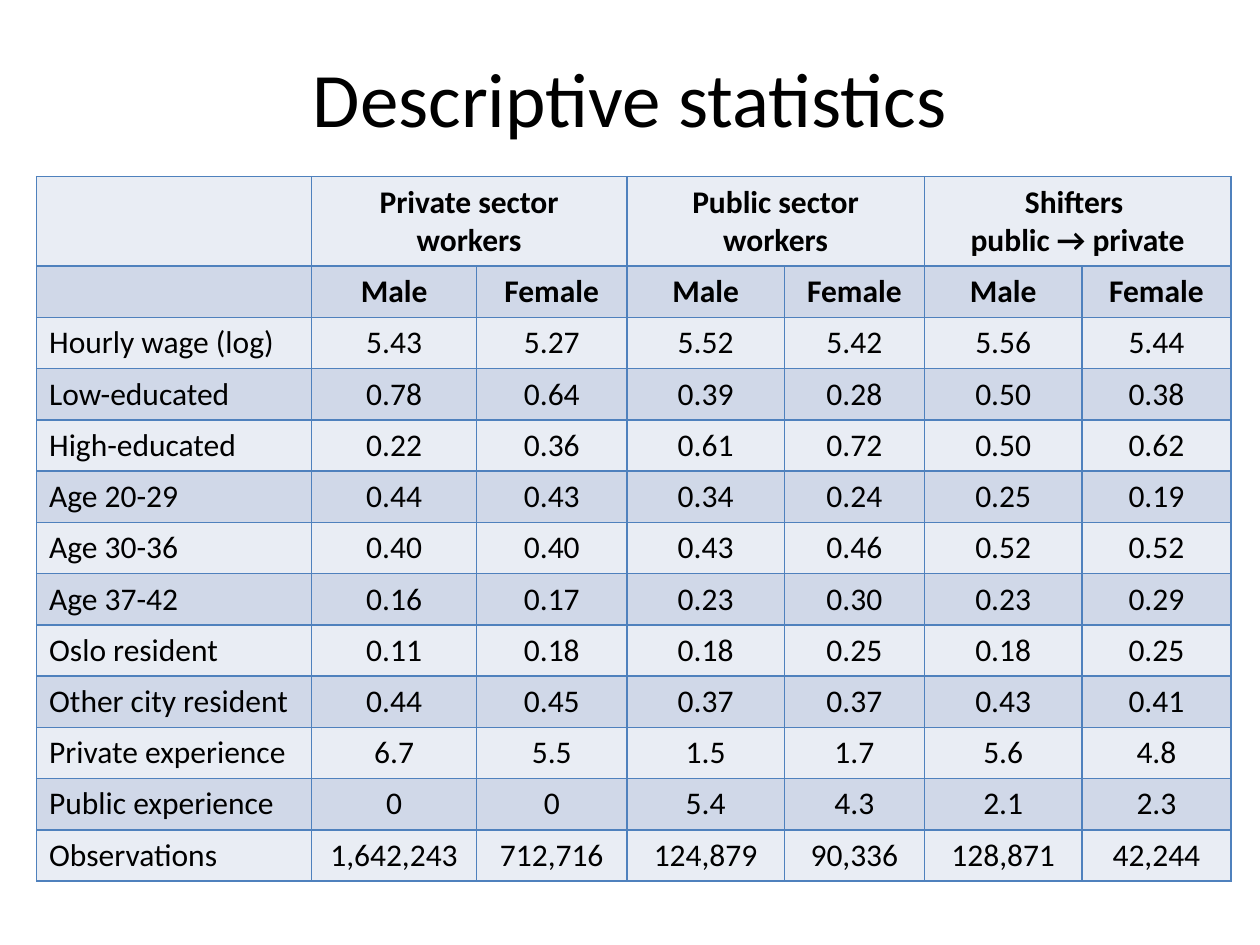
from lxml import etree
from pptx import Presentation
from pptx import util as u
from pptx.dml.color import RGBColor
from pptx.enum import text
from pptx.oxml import ns

WIDTH, HEIGHT = u.Inches(10), u.Inches(7.5)
INK, LINE = "000000", "4F81BD"
BANDS = ("E9EDF4", "D0D8E8")
COLUMN_WEIGHTS = (2.18, 1.31, 1.19, 1.25, 1.11, 1.25, 1.18)
HEADER_WEIGHT = 1.7
GROUPS = ("Private sector workers", "Public sector workers", "Shifters \npublic → private")
STATISTICS = (
    ("Hourly wage (log)", "5.43", "5.27", "5.52", "5.42", "5.56", "5.44"),
    ("Low-educated", "0.78", "0.64", "0.39", "0.28", "0.50", "0.38"),
    ("High-educated", "0.22", "0.36", "0.61", "0.72", "0.50", "0.62"),
    ("Age 20-29", "0.44", "0.43", "0.34", "0.24", "0.25", "0.19"),
    ("Age 30-36", "0.40", "0.40", "0.43", "0.46", "0.52", "0.52"),
    ("Age 37-42", "0.16", "0.17", "0.23", "0.30", "0.23", "0.29"),
    ("Oslo resident", "0.11", "0.18", "0.18", "0.25", "0.18", "0.25"),
    ("Other city resident", "0.44", "0.45", "0.37", "0.37", "0.43", "0.41"),
    ("Private experience", "6.7", "5.5", "1.5", "1.7", "5.6", "4.8"),
    ("Public experience", "0", "0", "5.4", "4.3", "2.1", "2.3"),
    ("Observations", "1,642,243", "712,716", "124,879", "90,336", "128,871", "42,244"),
)


def color(value):
    """Turn a hex string into a colour."""
    return RGBColor.from_string(value)


def share_box(left, top, width, height):
    """Turn shares of the slide into a box of lengths."""
    return [round(share * side) for share, side in
            zip((left, top, width, height), (WIDTH, HEIGHT, WIDTH, HEIGHT))]


def write(frame, words, size=18, bold=False, align=text.PP_ALIGN.CENTER):
    """Write words into a text frame, one paragraph for each line."""
    for index, line in enumerate(words.split("\n")):
        para = frame.add_paragraph() if index else frame.paragraphs[0]
        para.alignment = align
        span = para.add_run()
        span.text = line
        span.font.name, span.font.size, span.font.bold = "Calibri", u.Pt(size), bold
        span.font.color.rgb = color(INK)


def style_cell(cell, fill):
    """Give a cell its four borders and its fill."""
    properties = cell._tc.get_or_add_tcPr()
    for side in ("a:lnL", "a:lnR", "a:lnT", "a:lnB"):
        border = etree.SubElement(properties, ns.qn(side), w=str(u.Pt(1)))
        solid = etree.SubElement(border, ns.qn("a:solidFill"))
        etree.SubElement(solid, ns.qn("a:srgbClr"), val=LINE)
    cell.fill.solid()
    cell.fill.fore_color.rgb = color(fill)


def place_title(page, box, words):
    """Place the slide title in its placeholder."""
    title = page.shapes.title
    title.left, title.top, title.width, title.height = box
    title.text_frame.vertical_anchor = text.MSO_ANCHOR.MIDDLE
    write(title.text_frame, words, size=44)


def place_statistics(page, box):
    """Place the table, with a pair of columns for each group of workers."""
    group_row = [""] + [words for group in GROUPS for words in (group, "")]
    rows = [group_row, ["", *("Male", "Female") * len(GROUPS)], *STATISTICS]
    table = page.shapes.add_table(len(rows), len(COLUMN_WEIGHTS), *box).table
    for column, weight in zip(table.columns, COLUMN_WEIGHTS):
        column.width = round(box[2] * weight / sum(COLUMN_WEIGHTS))
    row_height = box[3] / (len(rows) - 1 + HEADER_WEIGHT)
    for r, values in enumerate(rows):
        table.rows[r].height = round(row_height * (1 if r else HEADER_WEIGHT))
        for c, words in enumerate(values):
            cell = table.cell(r, c)
            style_cell(cell, BANDS[r % 2])
            if words:
                align = text.PP_ALIGN.CENTER if c else text.PP_ALIGN.LEFT
                write(cell.text_frame, words, bold=r < 2, align=align)
    for c in range(1, len(COLUMN_WEIGHTS), 2):
        table.cell(0, c).merge(table.cell(0, c + 1))


def main():
    """Build the slide and save it."""
    deck = Presentation()
    deck.slide_width, deck.slide_height = WIDTH, HEIGHT
    page = deck.slides.add_slide(deck.slide_layouts[5])
    place_title(page, share_box(0.05, 0.04, 0.9, 0.125), "Descriptive statistics")
    place_statistics(page, share_box(0.029, 0.187, 0.948, 0.743))
    deck.save("out.pptx")


if __name__ == "__main__":
    main()
